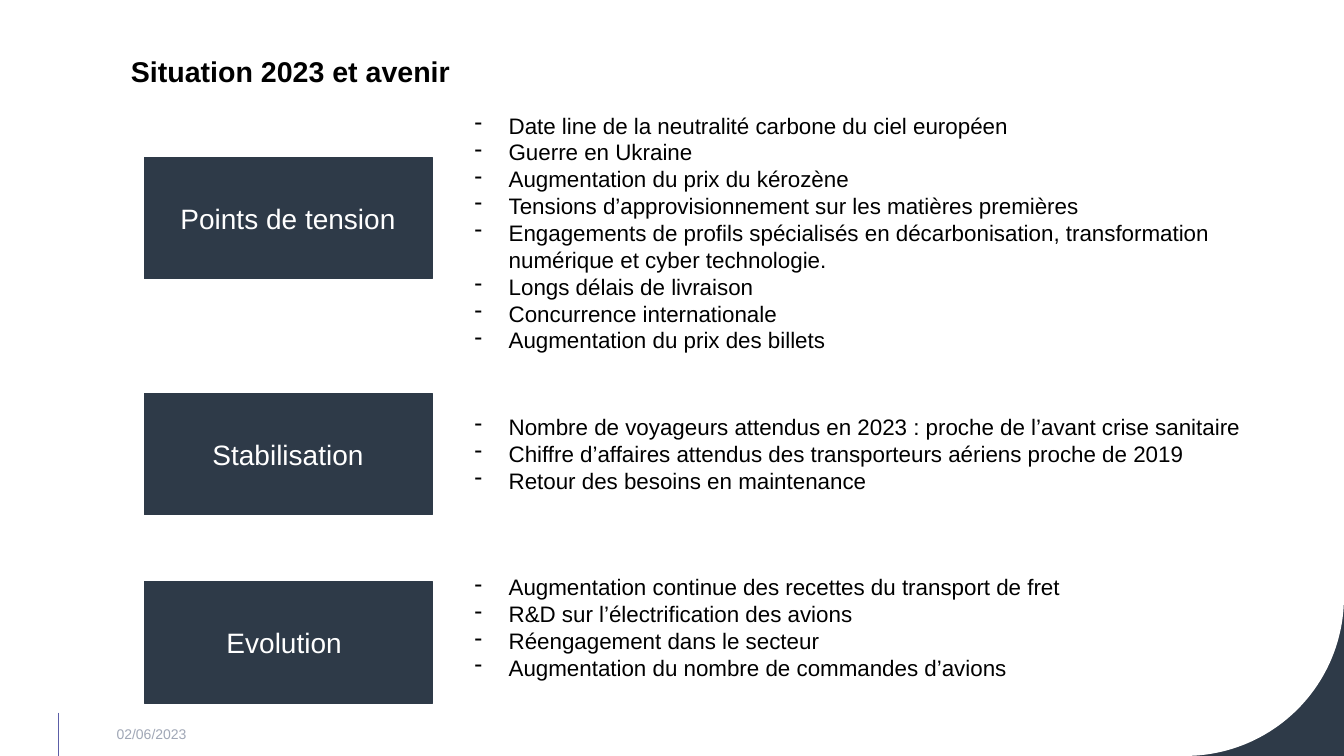
"""Build the slide on the 2023 situation and outlook, with three labelled themes."""
from typing import NamedTuple

from lxml import etree
from pptx import Presentation
from pptx.dml.color import RGBColor
from pptx.enum import shapes, text
from pptx.oxml import ns
from pptx.util import Cm, Pt

COLORS = {
    "navy": "2E3A48",
    "white": "FFFFFF",
    "black": "000000",
    "violet": "5C5EA7",
    "grey": "A0A7B6",
}
FONT = "Arial"
SLIDE_WIDTH, SLIDE_HEIGHT = Cm(33.87), Cm(19.05)
LABEL_LEFT, LABEL_WIDTH, LABEL_HEIGHT = Cm(3.63), Cm(7.26), Cm(3.06)
POINTS_LEFT, POINTS_WIDTH = Cm(11.71), Cm(20.93)
INDENT = Cm(0.86)


class Theme(NamedTuple):
    label: str
    label_top: float
    points_top: float
    points_height: float
    points: list[str]


THEMES = [
    Theme("Points de tension", 3.96, 2.69, 6.4, [
        "Date line de la neutralité carbone du ciel européen",
        "Guerre en Ukraine",
        "Augmentation du prix du kérozène",
        "Tensions d’approvisionnement sur les matières premières",
        "Engagements de profils spécialisés en décarbonisation, "
        "transformation numérique et cyber technologie.",
        "Longs délais de livraison",
        "Concurrence internationale",
        "Augmentation du prix des billets",
    ]),
    Theme("Stabilisation", 9.91, 10.29, 2.31, [
        "Nombre de voyageurs attendus en 2023 : proche de l’avant crise sanitaire",
        "Chiffre d’affaires attendus des transporteurs aériens proche de 2019",
        "Retour des besoins en maintenance",
    ]),
    Theme("Evolution ", 14.66, 14.33, 3.68, [
        "Augmentation continue des recettes du transport de fret",
        "R&D sur l’électrification des avions",
        "Réengagement dans le secteur",
        "Augmentation du nombre de commandes d’avions",
    ]),
]


def color(name: str) -> RGBColor:
    return RGBColor.from_string(COLORS[name])


def write(frame, lines: list[str], size: float, ink: str, bold: bool = False) -> None:
    frame.word_wrap = True
    frame.text = "\n".join(lines)
    for paragraph in frame.paragraphs:
        for run in paragraph.runs:
            run.font.name = FONT
            run.font.size = Pt(size)
            run.font.bold = bold
            run.font.color.rgb = color(ink)


def draw_backdrop(slide) -> None:
    slide.background.fill.solid()
    slide.background.fill.fore_color.rgb = color("navy")
    page = slide.shapes.add_shape(
        shapes.MSO_SHAPE.ROUND_1_RECTANGLE, 0, 0, SLIDE_WIDTH, SLIDE_HEIGHT)
    page.adjustments[0] = 0.21
    page.shadow.inherit = False
    page.fill.solid()
    page.fill.fore_color.rgb = color("white")
    page.line.fill.background()
    page._element.spPr.xfrm.set("flipV", "1")

    margin_rule = slide.shapes.add_connector(
        shapes.MSO_CONNECTOR.STRAIGHT, Cm(1.47), Cm(17.96), Cm(1.47), SLIDE_HEIGHT)
    margin_rule.line.color.rgb = color("violet")
    margin_rule.line.width = Pt(0.5)
    etree.SubElement(margin_rule._element.spPr, ns.qn("a:effectLst"))


def draw_title(slide) -> None:
    title = slide.shapes.add_textbox(Cm(2.84), Cm(1.24), Cm(8.84), Cm(1.27)).text_frame
    title.margin_left, title.margin_right = Cm(0.46), 0
    write(title, ["Situation 2023 et avenir"], 20.4, "black", bold=True)


def draw_date(slide) -> None:
    date = slide.shapes.add_textbox(Cm(2.84), Cm(17.98), Cm(7.62), Cm(1.02)).text_frame
    date.margin_left = Cm(0.1)
    date.vertical_anchor = text.MSO_ANCHOR.MIDDLE
    write(date, ["02/06/2023"], 10, "grey")


def draw_theme(slide, theme: Theme) -> None:
    label = slide.shapes.add_shape(
        shapes.MSO_SHAPE.RECTANGLE, LABEL_LEFT, Cm(theme.label_top),
        LABEL_WIDTH, LABEL_HEIGHT)
    label.shadow.inherit = False
    label.fill.solid()
    label.fill.fore_color.rgb = color("navy")
    label.line.color.rgb = color("navy")
    label.line.width = Pt(0.5)
    label.text_frame.vertical_anchor = text.MSO_ANCHOR.MIDDLE
    write(label.text_frame, [theme.label], 20, "white")
    label.text_frame.paragraphs[0].alignment = text.PP_ALIGN.CENTER

    points = slide.shapes.add_textbox(
        POINTS_LEFT, Cm(theme.points_top), POINTS_WIDTH, Cm(theme.points_height)).text_frame
    write(points, theme.points, 16, "black")
    points.auto_size = text.MSO_AUTO_SIZE.SHAPE_TO_FIT_TEXT
    for point in points.paragraphs:
        properties = point._p.get_or_add_pPr()
        properties.set("marL", str(INDENT))
        properties.set("indent", str(-INDENT))
        etree.SubElement(properties, ns.qn("a:buChar")).set("char", "-")


def main() -> None:
    deck = Presentation()
    deck.slide_width, deck.slide_height = SLIDE_WIDTH, SLIDE_HEIGHT
    slide = deck.slides.add_slide(deck.slide_layouts[6])
    draw_backdrop(slide)
    draw_title(slide)
    for theme in THEMES:
        draw_theme(slide, theme)
    draw_date(slide)
    deck.save("out.pptx")


if __name__ == "__main__":
    main()
